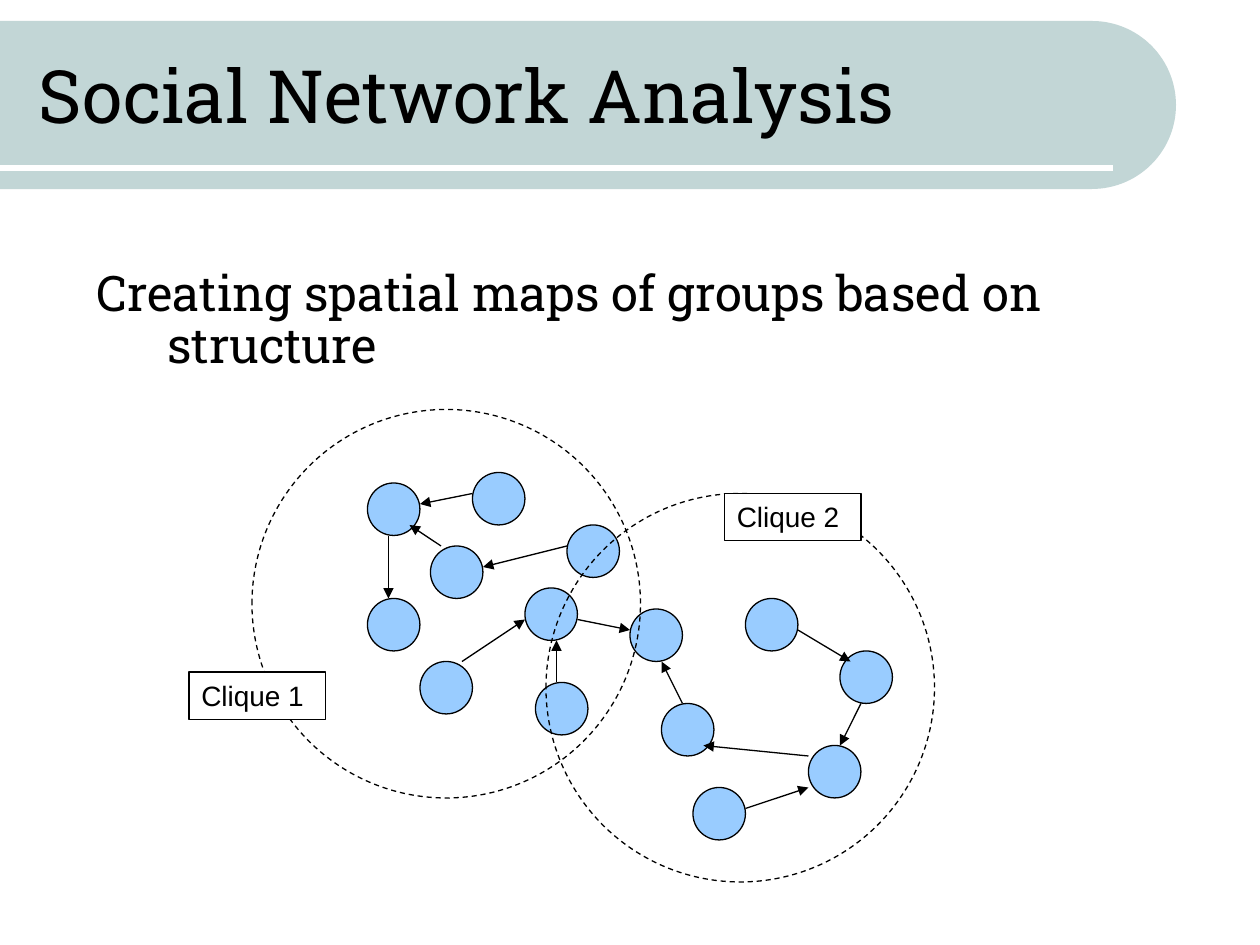
"""Build a slide that maps two overlapping cliques of a social network."""
from dataclasses import dataclass
from math import cos, pi, sin

from lxml.etree import SubElement
from pptx import Presentation
from pptx.dml.color import RGBColor
from pptx.enum.dml import MSO_LINE
from pptx.enum.shapes import MSO_CONNECTOR, MSO_SHAPE
from pptx.enum.text import MSO_ANCHOR, MSO_AUTO_SIZE, PP_ALIGN
from pptx.oxml.ns import qn
from pptx.util import Pt

PX = 9525
NODE_SIZE = 40
RING_SIZE = 296
LABEL_WIDTH, LABEL_HEIGHT = 104, 36
HANGING_INDENT = 54
COLORS = {"banner": "C2D6D6", "node": "99CCFF", "ink": "000000", "paper": "FFFFFF"}
HEADING_FONT, LABEL_FONT = "Roboto Slab", "Arial"


@dataclass(frozen=True)
class Node:
    left: int
    top: int


@dataclass(frozen=True)
class Tie:
    x1: int
    y1: int
    x2: int
    y2: int


@dataclass(frozen=True)
class Clique:
    name: str
    ring_left: int
    ring_top: int
    label_left: int
    label_top: int


NODES = [
    Node(280, 368), Node(328, 416), Node(360, 360), Node(280, 456), Node(432, 400),
    Node(408, 520), Node(320, 504), Node(480, 464), Node(400, 448), Node(568, 456),
    Node(504, 536), Node(640, 496), Node(616, 568), Node(528, 600),
]
TIES = [
    Tie(296, 408, 296, 456), Tie(424, 520, 424, 488), Tie(352, 504, 400, 472),
    Tie(336, 416, 312, 400), Tie(360, 376, 320, 384), Tie(432, 416, 368, 432),
    Tie(440, 472, 480, 480), Tie(608, 480, 648, 504), Tie(656, 536, 640, 568),
    Tie(616, 576, 536, 568), Tie(568, 616, 616, 600), Tie(520, 536, 504, 504),
]
CLIQUES = [
    Clique("Clique 1", 192, 312, 144, 512),
    Clique("Clique 2", 416, 376, 552, 376),
]


def color(name: str) -> RGBColor:
    return RGBColor.from_string(COLORS[name])


def place(shape, left: int, top: int, width: int, height: int) -> None:
    shape.left, shape.top = left * PX, top * PX
    shape.width, shape.height = width * PX, height * PX


def write(paragraph, text: str, size: int, font: str) -> None:
    paragraph.alignment = PP_ALIGN.LEFT
    run = paragraph.add_run()
    run.text = text
    run.font.size = Pt(size)
    run.font.name = font
    run.font.color.rgb = color("ink")


def add_outlined(slide, kind, left: int, top: int, width: int, height: int, fill: str = ""):
    shape = slide.shapes.add_shape(kind, left * PX, top * PX, width * PX, height * PX)
    shape.shadow.inherit = False
    if fill:
        shape.fill.solid()
        shape.fill.fore_color.rgb = color(fill)
    else:
        shape.fill.background()
    shape.line.color.rgb = color("ink")
    shape.line.width = Pt(0.75)
    return shape


def add_line(slide, tie: Tie, ink: str, points: float, arrow: bool) -> None:
    line = slide.shapes.add_connector(
        MSO_CONNECTOR.STRAIGHT, tie.x1 * PX, tie.y1 * PX, tie.x2 * PX, tie.y2 * PX)
    line.line.color.rgb = color(ink)
    line.line.width = Pt(points)
    properties = line.element.spPr
    if arrow:
        SubElement(properties.find(qn("a:ln")), qn("a:tailEnd"), type="triangle")
    SubElement(properties, qn("a:effectLst"))


def add_banner(slide) -> None:
    top, radius, arc_center, steps = 16, 64, 832, 60
    angles = [-pi / 2 + pi * step / steps for step in range(steps + 1)]
    arc = [(round((arc_center + radius * cos(a)) * PX),
            round((top + radius + radius * sin(a)) * PX)) for a in angles]
    outline = slide.shapes.build_freeform(0, top * PX)
    outline.add_line_segments(arc + [(0, (top + 2 * radius) * PX)], close=True)
    banner = outline.convert_to_shape()
    banner.shadow.inherit = False
    banner.fill.solid()
    banner.fill.fore_color.rgb = color("banner")
    banner.line.fill.background()
    add_line(slide, Tie(0, 128, 848, 128), "paper", 3, arrow=False)


def add_title(slide, text: str) -> None:
    title = slide.shapes.title
    title.element.getparent().append(title.element)
    place(title, 20, 24, 842, 96)
    frame = title.text_frame
    frame.auto_size = MSO_AUTO_SIZE.NONE
    frame.vertical_anchor = MSO_ANCHOR.MIDDLE
    write(frame.paragraphs[0], text, 42, HEADING_FONT)


def add_statement(slide, text: str) -> None:
    statement = slide.shapes.add_textbox(64 * PX, 200 * PX, 808 * PX, 100 * PX)
    statement.text_frame.word_wrap = True
    paragraph = statement.text_frame.paragraphs[0]
    paragraph.line_spacing = 0.9
    write(paragraph, text, 28, HEADING_FONT)
    indents = paragraph._p.get_or_add_pPr()
    indents.set("marL", str(HANGING_INDENT * PX))
    indents.set("indent", str(-HANGING_INDENT * PX))


def add_clique(slide, clique: Clique) -> None:
    ring = add_outlined(slide, MSO_SHAPE.OVAL, clique.ring_left, clique.ring_top,
                        RING_SIZE, RING_SIZE)
    ring.line.dash_style = MSO_LINE.DASH
    label = add_outlined(slide, MSO_SHAPE.RECTANGLE, clique.label_left, clique.label_top,
                         LABEL_WIDTH, LABEL_HEIGHT, "paper")
    label.text_frame.word_wrap = True
    label.text_frame.vertical_anchor = MSO_ANCHOR.TOP
    write(label.text_frame.paragraphs[0], clique.name, 16, LABEL_FONT)


def main() -> None:
    deck = Presentation()
    deck.slide_width, deck.slide_height = 960 * PX, 720 * PX
    slide = deck.slides.add_slide(deck.slide_layouts[5])
    add_banner(slide)
    add_title(slide, "Social Network Analysis")
    add_statement(slide, "Creating spatial maps of groups based on structure")
    for node in NODES:
        add_outlined(slide, MSO_SHAPE.OVAL, node.left, node.top, NODE_SIZE, NODE_SIZE, "node")
    for tie in TIES:
        add_line(slide, tie, "ink", 0.75, arrow=True)
    for clique in CLIQUES:
        add_clique(slide, clique)
    deck.save("out.pptx")


if __name__ == "__main__":
    main()
